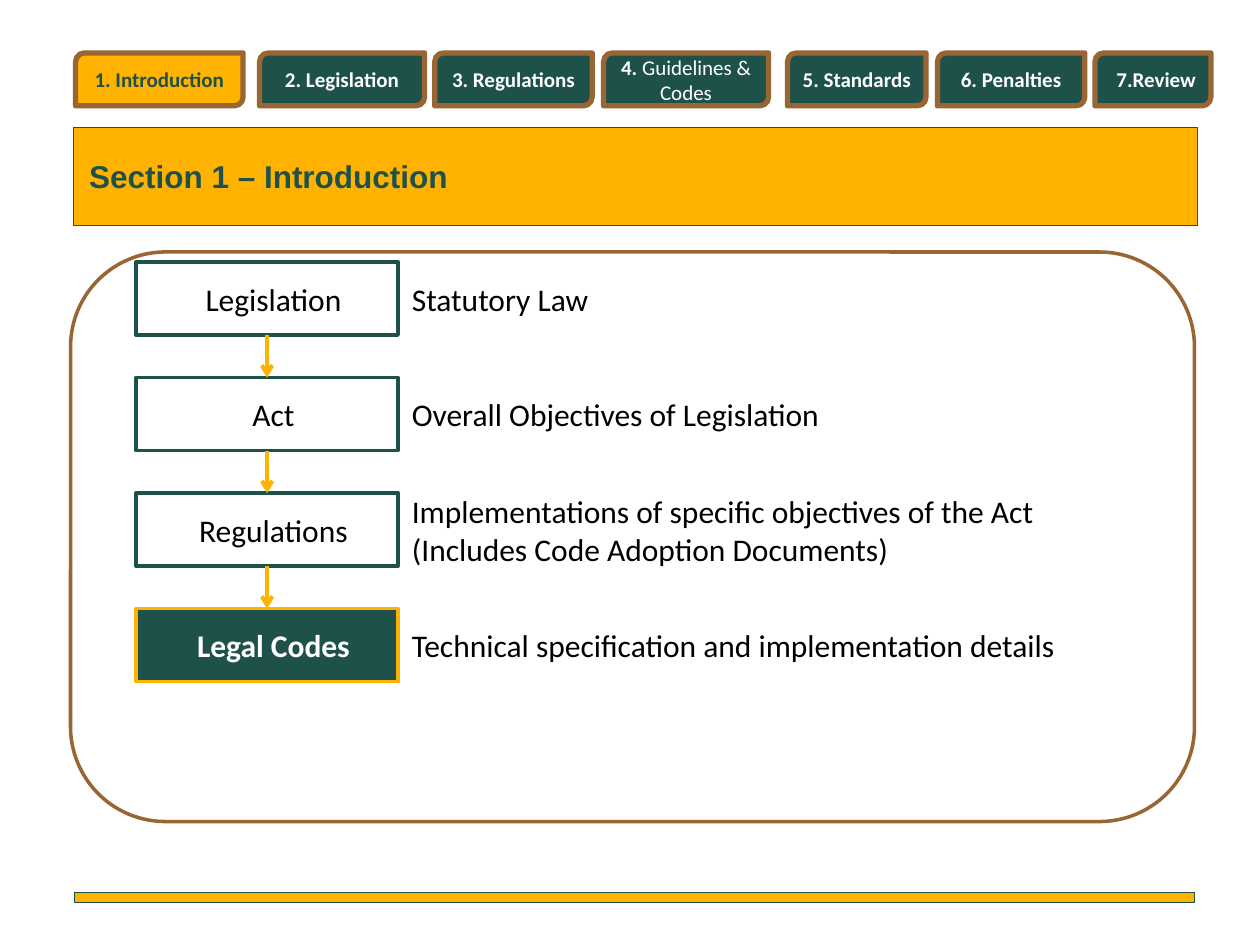
import pptx
import pptx.util
import pptx.dml.color
import pptx.enum.shapes
import pptx.enum.text
import pptx.oxml
import pptx.oxml.ns
from dataclasses import dataclass
from pptx.util import Inches


@dataclass(frozen=True)
class Theme:
    green: str = "1F514B"
    amber: str = "FFB300"
    brown: str = "996532"
    white: str = "FFFFFF"
    black: str = "000000"
    body_font: str = "Calibri"
    title_font: str = "Arial"
    body_size: int = 18
    tab_size: int = 12


THEME = Theme()
SHAPE = pptx.enum.shapes.MSO_SHAPE
ALIGN = pptx.enum.text.PP_ALIGN
color = pptx.dml.color.RGBColor.from_string


def add_box(parent, kind, left, top, width, height, fill, line, weight):
    box = parent.add_shape(kind, Inches(left), Inches(top), Inches(width), Inches(height))
    box.shadow.inherit = False
    if fill:
        box.fill.solid()
        box.fill.fore_color.rgb = color(fill)
    else:
        box.fill.background()
    box.line.color.rgb = color(line)
    box.line.width = pptx.util.Pt(weight)
    return box


def write(box, spans, size, ink, align=ALIGN.LEFT, font=THEME.body_font):
    frame = box.text_frame
    frame.word_wrap = True
    frame.vertical_anchor = pptx.enum.text.MSO_ANCHOR.MIDDLE
    para = frame.paragraphs[0]
    para.alignment = align
    for text, bold in spans:
        span = para.add_run()
        span.text = text
        span.font.name = font
        span.font.size = pptx.util.Pt(size)
        span.font.bold = bold
        span.font.color.rgb = color(ink)


deck = pptx.Presentation()
deck.slide_width = Inches(10)
deck.slide_height = Inches(7.5)
page = deck.slides.add_slide(deck.slide_layouts[6])

# Content frame and footer bar
add_box(page.shapes, SHAPE.ROUNDED_RECTANGLE, 0.56, 2, 8.92, 4.52, None, THEME.brown, 2)
add_box(page.shapes, SHAPE.RECTANGLE, 0.59, 7.08, 8.89, 0.08, THEME.amber, THEME.green, 0.5)

# Hierarchy of law: level, description, description width and height
levels = [
    ("Legislation", "Statutory Law", 3.58, 0.4),
    ("Act", "Overall Objectives of Legislation", 3.58, 0.4),
    ("Regulations", "Implementations of specific objectives of the Act "
     "(Includes Code Adoption Documents)", 5.42, 0.71),
    ("Legal Codes", "Technical specification and implementation details", 5.42, 0.4),
]
FIRST_TOP, LEVEL_HEIGHT, LEVEL_STEP = 2.08, 0.58, 2.75 / 3
level_boxes = []
for index, (level, description, width, height) in enumerate(levels):
    top = FIRST_TOP + index * LEVEL_STEP
    current = index == len(levels) - 1
    fill, line, ink = ((THEME.green, THEME.amber, THEME.white) if current
                       else (None, THEME.green, THEME.black))
    box = add_box(page.shapes, SHAPE.RECTANGLE, 1.08, top, 2.08, LEVEL_HEIGHT, fill, line, 2)
    box.text_frame.margin_left = Inches(0.2)
    write(box, [(level, current)], THEME.body_size, ink, ALIGN.CENTER)
    level_boxes.append(box)

    note = page.shapes.add_textbox(Inches(3.17), Inches(top + (LEVEL_HEIGHT - height) / 2),
                                   Inches(width), Inches(height))
    write(note, [(description, False)], THEME.body_size, THEME.black)

# Arrows from each level to the next
for upper, lower in zip(level_boxes, level_boxes[1:]):
    arrow = page.shapes.add_connector(pptx.enum.shapes.MSO_CONNECTOR.STRAIGHT, 0, 0, 0, 0)
    arrow.begin_connect(upper, 2)
    arrow.end_connect(lower, 0)
    arrow.line.color.rgb = color(THEME.amber)
    arrow.line.width = pptx.util.Pt(2.25)
    tip = pptx.oxml.parse_xml(
        f'<a:tailEnd {pptx.oxml.ns.nsdecls("a")} type="arrow"/>')
    arrow.line._get_or_add_ln().append(tip)
    arrow._element.spPr.append(
        pptx.oxml.parse_xml(f'<a:effectLst {pptx.oxml.ns.nsdecls("a")}/>'))

# Section title
banner = page.shapes.add_group_shape()
add_box(banner.shapes, SHAPE.RECTANGLE, 0.58, 1.01, 8.92, 0.78, THEME.amber, THEME.green, 0.5)
title = banner.shapes.add_textbox(Inches(0.61), Inches(1.2), Inches(7.57), Inches(0.4))
write(title, [("Section 1 – Introduction", True)], THEME.body_size, THEME.green,
      font=THEME.title_font)

# Navigation tabs: left, width, text runs with bold flag
tabs = [
    (0.6, 1.33, [("1. Introduction", True)]),
    (2.06, 1.31, [("2. Legislation", True)]),
    (3.45, 1.25, [("3. Regulations", True)]),
    (4.79, 1.31, [("4. ", True), ("Guidelines & Codes", False)]),
    (6.25, 1.1, [("5. Standards", True)]),
    (7.44, 1.17, [("6. Penalties", True)]),
    (8.69, 0.92, [("7.Review", True)]),
]
navigation = page.shapes.add_group_shape()
for index, (left, width, spans) in enumerate(tabs):
    fill, ink = (THEME.amber, THEME.green) if index == 0 else (THEME.green, THEME.white)
    align = ALIGN.RIGHT if index == len(tabs) - 1 else ALIGN.CENTER
    tab = add_box(navigation.shapes, SHAPE.ROUND_2_DIAG_RECTANGLE, left, 0.42, width, 0.42,
                  fill, THEME.brown, 3)
    write(tab, spans, THEME.tab_size, ink, align)

deck.save("out.pptx")
